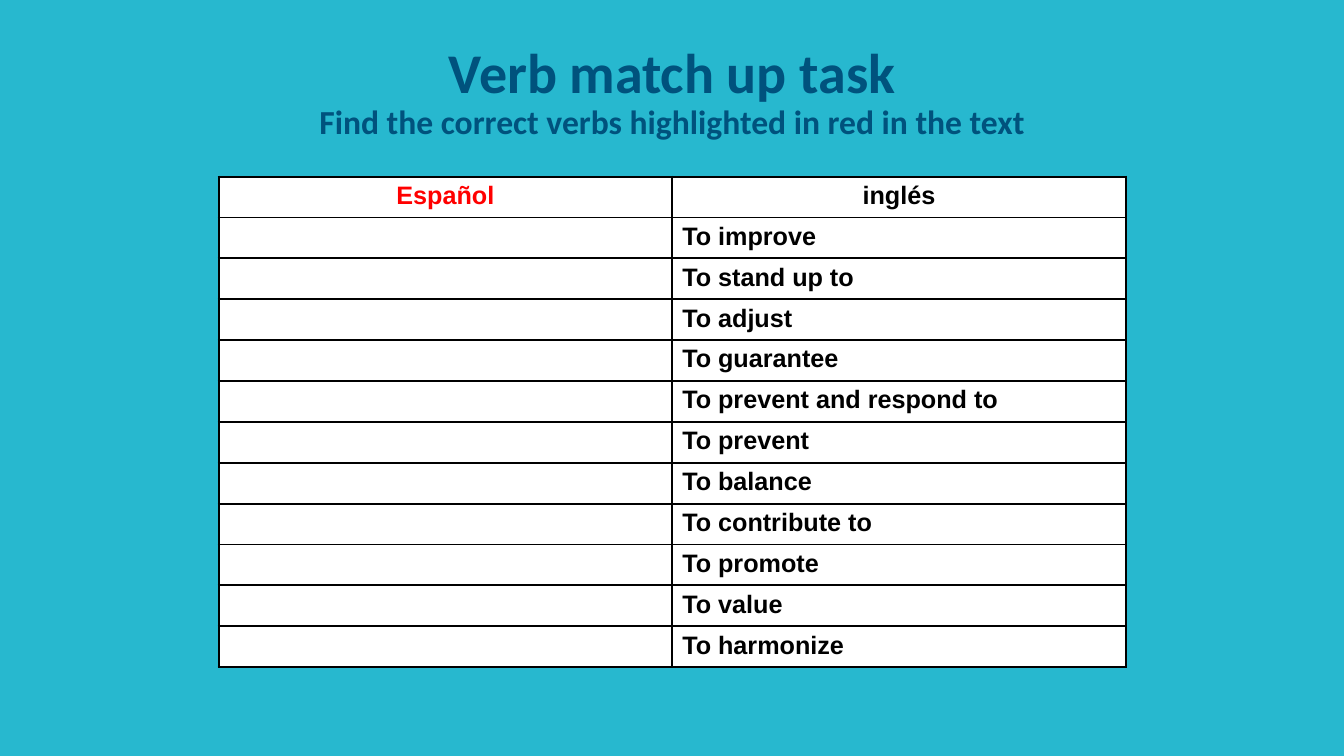
from lxml.etree import SubElement
from pptx import Presentation
from pptx.dml.color import RGBColor
from pptx.enum.text import MSO_ANCHOR as Anchor, PP_ALIGN as Align
from pptx.oxml.ns import qn
from pptx.util import Cm, Pt

COLOURS = {
    "background": "27B8CF",
    "title": "00527D",
    "spanish": "FF0000",
    "english": "000000",
    "border": "000000",
    "cell": "FFFFFF",
}
VERBS = [
    "To improve", "To stand up to", "To adjust", "To guarantee",
    "To prevent and respond to", "To prevent", "To balance",
    "To contribute to", "To promote", "To value", "To harmonize",
]
LEFT = Cm(5.51)
COLUMN_WIDTH = Cm(11.43)
ROW_HEIGHT = Cm(1.03)


def colour(name):
    return RGBColor.from_string(COLOURS[name])


def style_font(font, face, shade):
    font.name = face
    font.bold = True
    font.color.rgb = colour(shade)


def add_title(page, heading, instruction):
    box = page.shapes.add_textbox(LEFT, Cm(0.76), Cm(22.86), Cm(3.18))
    frame = box.text_frame
    frame.word_wrap = True
    frame.vertical_anchor = Anchor.MIDDLE
    para = frame.paragraphs[0]
    para.alignment = Align.CENTER
    para.line_spacing = 0.9
    style_font(para.font, "Calibri", "title")
    span = para.add_run()
    span.text = heading
    span.font.size = Pt(40)
    para.add_line_break()
    span = para.add_run()
    span.text = instruction
    span.font.size = Pt(24)


def add_borders(cell):
    properties = cell._tc.get_or_add_tcPr()
    for position, side in enumerate(("lnL", "lnR", "lnT", "lnB")):
        line = properties.makeelement(qn(f"a:{side}"), {"w": str(Pt(1.5))})
        fill = SubElement(line, qn("a:solidFill"))
        SubElement(fill, qn("a:srgbClr"), val=COLOURS["border"])
        properties.insert(position, line)


def fill_cell(cell, text, shade, alignment):
    cell.fill.solid()
    cell.fill.fore_color.rgb = colour("cell")
    add_borders(cell)
    cell.text = text
    para = cell.text_frame.paragraphs[0]
    para.alignment = alignment
    para.font.size = Pt(18)
    style_font(para.font, "Arial", shade)


def add_verb_table(page):
    rows = [("Español", "inglés")] + [("", verb) for verb in VERBS]
    table = page.shapes.add_table(
        len(rows), 2, LEFT, Cm(4.45), 2 * COLUMN_WIDTH, len(rows) * ROW_HEIGHT
    ).table
    for row_index, texts in enumerate(rows):
        table.rows[row_index].height = ROW_HEIGHT
        alignment = Align.LEFT if row_index else Align.CENTER
        for column, (text, shade) in enumerate(zip(texts, ("spanish", "english"))):
            fill_cell(table.cell(row_index, column), text, shade, alignment)


def main():
    deck = Presentation()
    deck.slide_width = Cm(33.87)
    deck.slide_height = Cm(19.05)
    page = deck.slides.add_slide(deck.slide_layouts[6])
    page.background.fill.solid()
    page.background.fill.fore_color.rgb = colour("background")
    add_title(page, "Verb match up task",
              "Find the correct verbs highlighted in red in the text")
    add_verb_table(page)
    deck.save("out.pptx")


if __name__ == "__main__":
    main()
